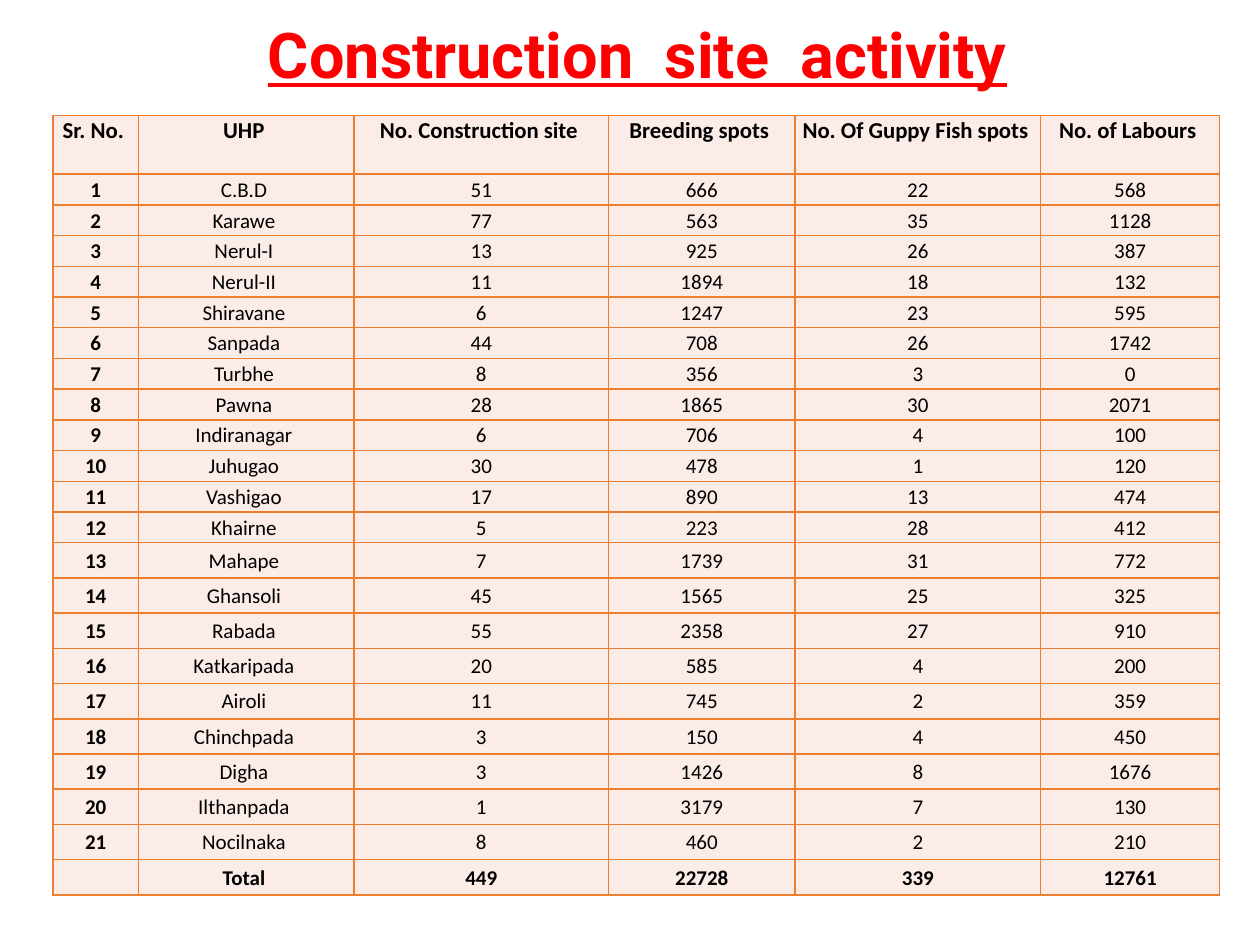
from typing import NamedTuple

from lxml.etree import SubElement
from pptx import Presentation
from pptx.dml.color import RGBColor
from pptx.enum.text import MSO_ANCHOR, PP_ALIGN
from pptx.oxml.ns import qn
from pptx.util import Inches, Pt

RED = RGBColor(0xFF, 0x00, 0x00)
BLACK = RGBColor(0x00, 0x00, 0x00)
PINK = RGBColor(0xFC, 0xEC, 0xE8)
ORANGE = RGBColor(0xED, 0x7D, 0x31)

WIDE, HIGH = Inches(10), Inches(7.5)
COLS = (6.8, 17.1, 20.2, 14.8, 19.5, 14.2)
ROWS = (6.24,) + (3.25,) * 12 + (3.73,) * 10
HEAD = ("Sr. No. ", "UHP ", "No. Construction site ", "Breeding spots ",
        "No. Of Guppy Fish spots ", "No. of Labours ")


class Site(NamedTuple):
    name: str
    count: int
    spots: int
    guppy: int
    crew: int


class Style(NamedTuple):
    size: float
    bold: bool
    anchor: MSO_ANCHOR = MSO_ANCHOR.MIDDLE


SITES = (
    Site("C.B.D", 51, 666, 22, 568),
    Site("Karawe", 77, 563, 35, 1128),
    Site("Nerul-I", 13, 925, 26, 387),
    Site("Nerul-II", 11, 1894, 18, 132),
    Site("Shiravane", 6, 1247, 23, 595),
    Site("Sanpada", 44, 708, 26, 1742),
    Site("Turbhe", 8, 356, 3, 0),
    Site("Pawna", 28, 1865, 30, 2071),
    Site("Indiranagar", 6, 706, 4, 100),
    Site("Juhugao", 30, 478, 1, 120),
    Site("Vashigao", 17, 890, 13, 474),
    Site("Khairne", 5, 223, 28, 412),
    Site("Mahape", 7, 1739, 31, 772),
    Site("Ghansoli", 45, 1565, 25, 325),
    Site("Rabada", 55, 2358, 27, 910),
    Site("Katkaripada", 20, 585, 4, 200),
    Site("Airoli", 11, 745, 2, 359),
    Site("Chinchpada", 3, 150, 4, 450),
    Site("Digha", 3, 1426, 8, 1676),
    Site("Ilthanpada", 1, 3179, 7, 130),
    Site("Nocilnaka", 8, 460, 2, 210),
)
TOTAL = Site("Total", 449, 22728, 339, 12761)

TOP = Style(13, True, MSO_ANCHOR.TOP)
BOLD = Style(12, True)
PLAIN = Style(12, False)


def across(share: float) -> int:
    """Turn a percentage of the slide width into a length."""
    return round(WIDE * share / 100)


def down(share: float) -> int:
    """Turn a percentage of the slide height into a length."""
    return round(HIGH * share / 100)


def add_title(slide, text: str) -> None:
    """Write the underlined heading across the top."""
    box = slide.shapes.add_textbox(across(7.5), 0, across(86.2), down(11.33))
    frame = box.text_frame
    frame.word_wrap = True
    frame.vertical_anchor = MSO_ANCHOR.MIDDLE
    line = frame.paragraphs[0]
    line.text = text
    line.alignment = PP_ALIGN.CENTER
    font = line.font
    font.name, font.size = "Roboto", Pt(36)
    font.bold = font.underline = True
    font.color.rgb = RED


def add_edges(cell) -> None:
    """Rule all four sides of a cell in orange."""
    props = cell._tc.get_or_add_tcPr()
    for side in ("a:lnL", "a:lnR", "a:lnT", "a:lnB"):
        edge = SubElement(props, qn(side), w=str(Pt(1)))
        fill = SubElement(edge, qn("a:solidFill"))
        SubElement(fill, qn("a:srgbClr"), val=str(ORANGE))


def fill_cell(cell, text: str, style: Style) -> None:
    """Set the text, margins, borders and fill of one cell."""
    cell.margin_left = cell.margin_right = cell.margin_top = Inches(0.01)
    cell.margin_bottom = 0
    cell.vertical_anchor = style.anchor
    add_edges(cell)
    cell.fill.solid()
    cell.fill.fore_color.rgb = PINK
    line = cell.text_frame.paragraphs[0]
    if text:
        line.text = text
    line.alignment = PP_ALIGN.CENTER
    font = line.font
    font.name, font.size, font.bold = "Calibri", Pt(style.size), style.bold
    font.color.rgb = BLACK


def fill_row(table, row: int, texts: tuple, styles: tuple) -> None:
    """Fill one table row from left to right."""
    for col, (text, style) in enumerate(zip(texts, styles)):
        fill_cell(table.cell(row, col), text, style)


def as_texts(label: str, site: Site) -> tuple:
    """List the cell texts of a site under its row label."""
    return (label, f"{site.name} ", *map(str, site[1:]))


def add_sites(slide) -> None:
    """Draw the table of sites with its header and total."""
    frame = slide.shapes.add_table(
        len(ROWS), len(COLS), across(4.2), down(12.2),
        across(sum(COLS)), down(sum(ROWS)))
    table = frame.table
    for col, share in zip(table.columns, COLS):
        col.width = across(share)
    for row, share in zip(table.rows, ROWS):
        row.height = down(share)
    span = len(COLS)
    fill_row(table, 0, HEAD, (TOP,) * span)
    for row, site in enumerate(SITES, 1):
        fill_row(table, row, as_texts(str(row), site),
                 (BOLD,) + (PLAIN,) * (span - 1))
    fill_row(table, len(ROWS) - 1, as_texts("", TOTAL), (BOLD,) * span)


def main() -> None:
    """Build the slide and save it."""
    deck = Presentation()
    deck.slide_width, deck.slide_height = WIDE, HIGH
    slide = deck.slides.add_slide(deck.slide_layouts[6])
    add_title(slide, "Construction  site  activity")
    add_sites(slide)
    deck.save("out.pptx")


if __name__ == "__main__":
    main()
